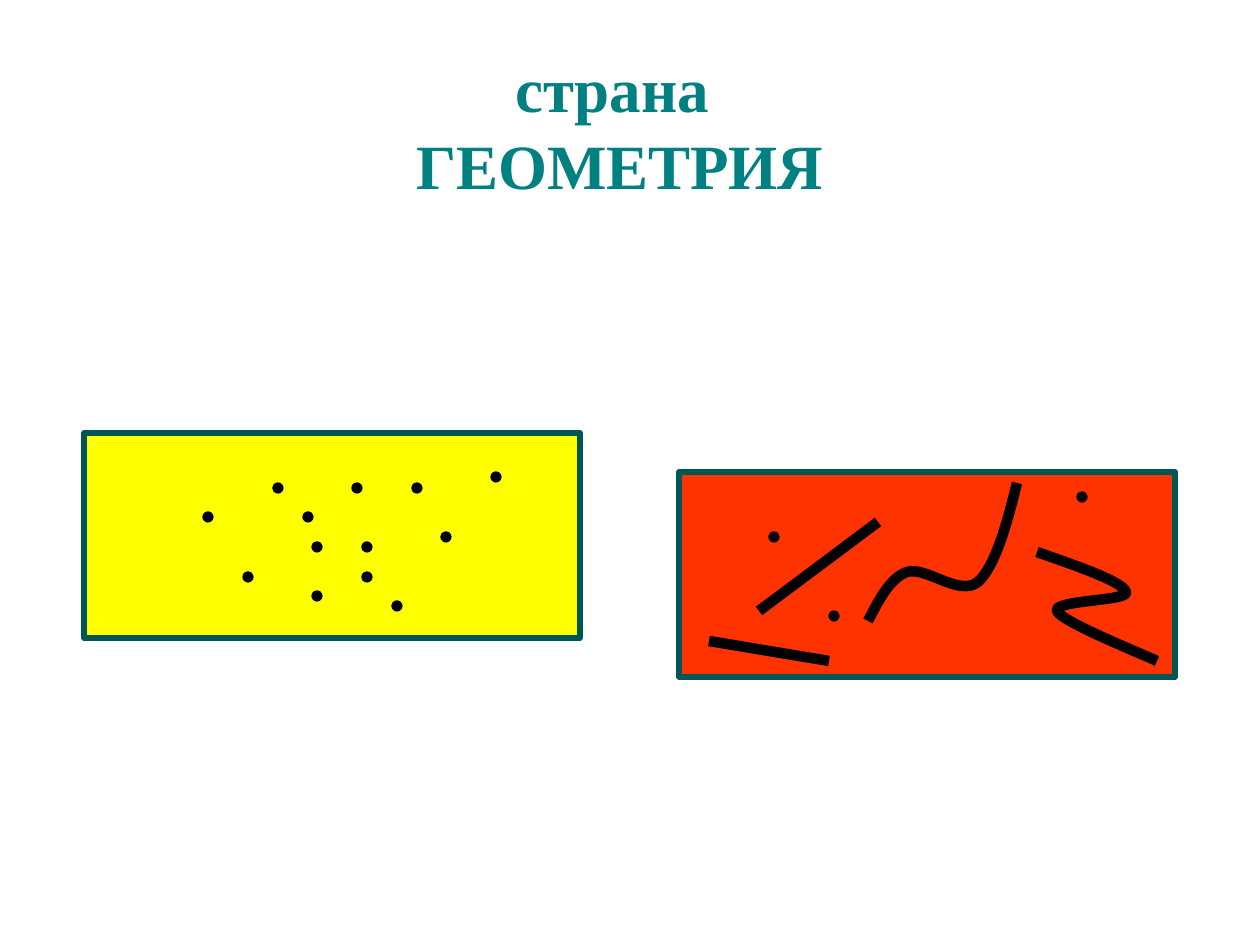
import dataclasses
import typing

import lxml.etree
import pptx
import pptx.dml.color
import pptx.enum.shapes
import pptx.enum.text
import pptx.oxml
import pptx.oxml.ns
import pptx.shapes.shapetree
import pptx.util

SCALE = 914400 / 126
DOT = 10
Point = tuple[int, int]
Group = pptx.shapes.shapetree.GroupShapes
Kind = pptx.enum.shapes.MSO_SHAPE
qn = pptx.oxml.ns.qn


def rgb(code: str) -> pptx.dml.color.RGBColor:
    return pptx.dml.color.RGBColor.from_string(code)


@dataclasses.dataclass(frozen=True)
class Theme:
    ink: str = "000000"
    edge: str = "005654"
    title: str = "008080"
    red: str = "FF3300"
    yellow: str = "FFFF00"
    font: str = "Times New Roman"
    size: int = 36
    thin: float = 0.75
    frame: int = 3
    thick: int = 6


THEME = Theme()


class Panel(typing.NamedTuple):
    left: int
    top: int
    fill: str
    dots: list[Point]
    lines: list[tuple[Point, Point]] = []
    curves: list[list[Point]] = []
    width: int = 496
    height: int = 205


PANELS = [
    Panel(
        679, 472, THEME.red,
        dots=[(774, 537), (1082, 497), (834, 616)],
        lines=[((759, 611), (878, 522)), ((709, 641), (829, 661))],
        curves=[
            [(868, 621), (879, 600), (890, 578), (907, 572), (926, 566),
             (959, 597), (978, 582), (995, 567), (1007, 524), (1017, 483)],
            [(1037, 552), (1080, 567), (1123, 582), (1126, 592), (1130, 601),
             (1052, 600), (1057, 611), (1062, 622), (1140, 653), (1157, 661)],
        ],
    ),
    Panel(
        84, 433, THEME.yellow,
        dots=[(248, 577), (317, 596), (357, 488), (496, 477), (317, 547),
              (367, 577), (446, 537), (397, 606), (417, 488), (278, 488),
              (208, 517), (308, 517), (367, 547)],
    ),
]


def px(count: int) -> pptx.util.Emu:
    return pptx.util.Emu(round(count * SCALE))


def stroke(shape: typing.Any, color: str, width: float) -> None:
    shape.line.color.rgb = rgb(color)
    shape.line.width = pptx.util.Pt(width)


def draw_shape(group: Group, kind: Kind, box: tuple[int, int, int, int],
               fill: str, edge: str, width: float) -> None:
    shape = group.add_shape(kind, *map(px, box))
    shape.shadow.inherit = False
    shape.fill.solid()
    shape.fill.fore_color.rgb = rgb(fill)
    stroke(shape, edge, width)


def draw_dot(group: Group, center: Point) -> None:
    x, y = center
    box = (x - DOT // 2, y - DOT // 2, DOT, DOT)
    draw_shape(group, Kind.OVAL, box, THEME.ink, THEME.ink, THEME.thin)


def draw_line(group: Group, start: Point, end: Point) -> None:
    line = group.add_connector(pptx.enum.shapes.MSO_CONNECTOR.STRAIGHT,
                               *map(px, start + end))
    stroke(line, THEME.ink, THEME.thick)
    lxml.etree.SubElement(line._element.spPr, qn("a:effectLst"))


def draw_curve(group: Group, points: list[Point]) -> None:
    pen = group.build_freeform(*points[0], scale=SCALE)
    pen.add_line_segments(points[1:], close=False)
    shape = pen.convert_to_shape()
    shape.shadow.inherit = False
    shape.fill.background()
    stroke(shape, THEME.ink, THEME.thick)
    track = next(shape._element.iter(qn("a:path")))
    steps = track.findall(qn("a:lnTo"))
    for first in range(0, len(steps), 3):
        bend = lxml.etree.SubElement(track, qn("a:cubicBezTo"))
        for step in steps[first:first + 3]:
            bend.append(step[0])
            track.remove(step)


def draw_panel(slide: typing.Any, panel: Panel) -> None:
    group = slide.shapes.add_group_shape().shapes
    box = (panel.left, panel.top, panel.width, panel.height)
    draw_shape(group, Kind.RECTANGLE, box, panel.fill, THEME.edge, THEME.frame)
    for dot in panel.dots:
        draw_dot(group, dot)
    for start, end in panel.lines:
        draw_line(group, start, end)
    for curve in panel.curves:
        draw_curve(group, curve)


def set_title(slide: typing.Any) -> None:
    title = slide.shapes.title
    title.left, title.top, title.width, title.height = map(px, (104, 35, 1032, 238))
    frame = title.text_frame
    frame.text = "страна \nГЕОМЕТРИЯ"
    frame.word_wrap = True
    frame.auto_size = pptx.enum.text.MSO_AUTO_SIZE.NONE
    frame.vertical_anchor = pptx.enum.text.MSO_ANCHOR.TOP
    frame.margin_top = px(14)
    for line in frame.paragraphs:
        line.alignment = pptx.enum.text.PP_ALIGN.CENTER
        for run in line.runs:
            run.font.name = THEME.font
            run.font.size = pptx.util.Pt(THEME.size)
            run.font.bold = True
            run.font.color.rgb = rgb(THEME.title)
    frame.paragraphs[1].space_before = pptx.util.Pt(1)


def main() -> None:
    deck = pptx.Presentation()
    deck.slide_width = px(1260)
    deck.slide_height = px(945)
    slide = deck.slides.add_slide(deck.slide_layouts.get_by_name("Title Only"))
    set_title(slide)
    for panel in PANELS:
        draw_panel(slide, panel)
    deck.save("out.pptx")


if __name__ == "__main__":
    main()
